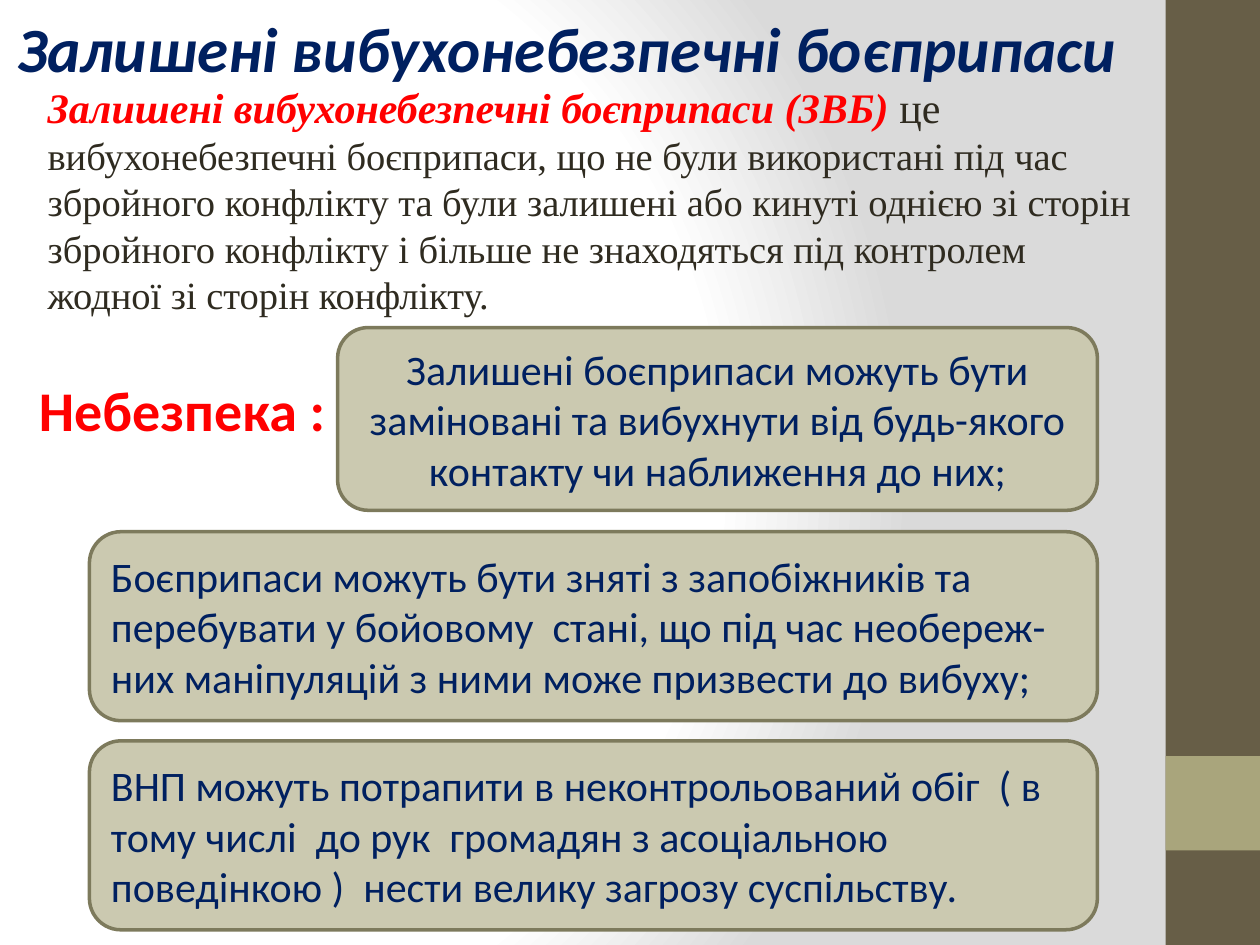
from pptx import Presentation
from pptx.dml.color import RGBColor
from pptx.enum.shapes import MSO_SHAPE
from pptx.enum.text import MSO_ANCHOR, MSO_AUTO_SIZE, PP_ALIGN
from pptx.oxml import parse_xml
from pptx.oxml.ns import nsdecls, qn
from pptx.util import Inches, Pt

NAVY = RGBColor(0x00, 0x20, 0x60)
RED = RGBColor(0xFF, 0x00, 0x00)
INK = RGBColor(0x2F, 0x2B, 0x20)
BROWN = RGBColor(0x67, 0x5E, 0x47)
OLIVE = RGBColor(0xA9, 0xA5, 0x7C)
BOX_FILL = RGBColor(0xCB, 0xC9, 0xB0)
BOX_LINE = RGBColor(0x7D, 0x7A, 0x5C)

# Text formats
TITLE = dict(name="Calibri", size=Pt(36), bold=True, italic=True, color=NAVY)
TERM = dict(name="Times New Roman", size=Pt(24), bold=True, italic=True, color=RED)
LINK = dict(name="Times New Roman", size=Pt(24), color=INK)
BODY = dict(name="Times New Roman", size=Pt(22), color=INK)
DANGER = dict(name="Calibri", size=Pt(32), bold=True, color=RED)
BOX = dict(name="Calibri", size=Pt(24), color=NAVY)

# Side bands: position, colour
BANDS = [((9.25, 0, 0.75, 7.5), BROWN), ((9.25, 6, 0.75, 0.75), OLIVE)]

# Text boxes: position, alignment, runs
TEXTS = [
    ((0.04, 0.03, 9.96, 0.71), PP_ALIGN.LEFT,
     [("Залишені вибухонебезпечні боєприпаси", TITLE)]),
    ((0.28, 0.6, 8.86, 1.99), PP_ALIGN.LEFT,
     [("Залишені вибухонебезпечні боєприпаси (ЗВБ) ", TERM),
      ("це ", LINK),
      ("вибухонебезпечні боєприпаси, що не були використані під час збройного "
       "конфлікту та були залишені або кинуті однією зі сторін збройного конфлікту "
       "і більше не знаходяться під контролем жодної зі сторін конфлікту.", BODY)]),
    ((-0.01, 2.93, 2.91, 0.64), PP_ALIGN.CENTER, [("Небезпека :", DANGER)]),
]

# Danger boxes share a right edge: left, top, height, alignment, text
BOX_RIGHT = 8.71
BOXES = [
    (2.68, 2.6, 1.45, PP_ALIGN.CENTER,
     "Залишені боєприпаси можуть бути заміновані та вибухнути від будь-якого "
     "контакту чи наближення до них;"),
    (0.71, 4.22, 1.5, PP_ALIGN.LEFT,
     "Боєприпаси можуть бути зняті з запобіжників та перебувати у бойовому  стані, "
     "що під час необереж-них маніпуляцій з ними може призвести до вибуху;"),
    (0.71, 5.88, 1.5, PP_ALIGN.LEFT,
     "ВНП можуть потрапити в неконтрольований обіг  ( в тому числі  до рук  громадян "
     "з асоціальною поведінкою )  нести велику загрозу суспільству."),
]

GRADIENT = f"""<a:gradFill {nsdecls('a')} rotWithShape="1"><a:gsLst>
<a:gs pos="0"><a:srgbClr val="FFFFFF"/></a:gs>
<a:gs pos="75000"><a:srgbClr val="FFFFFF"/></a:gs>
<a:gs pos="100000"><a:srgbClr val="DADADA"/></a:gs></a:gsLst>
<a:path path="circle"><a:fillToRect l="20000" t="50000" r="100000" b="50000"/></a:path>
</a:gradFill>"""


def set_background(s):
    s.background.fill.gradient()
    old = s.element.find(".//" + qn("a:gradFill"))
    old.getparent().replace(old, parse_xml(GRADIENT))


def write(tf, align, runs):
    tf.word_wrap = True
    p = tf.paragraphs[0]
    p.alignment = align
    for text, fmt in runs:
        r = p.add_run()
        r.text = text
        for key, value in fmt.items():
            if key == "color":
                r.font.color.rgb = value
            else:
                setattr(r.font, key, value)


def add_block(s, kind, at, fill, line=None):
    sp = s.shapes.add_shape(kind, *map(Inches, at))
    sp.shadow.inherit = False
    sp.fill.solid()
    sp.fill.fore_color.rgb = fill
    if line is None:
        sp.line.fill.background()
    else:
        sp.line.color.rgb = line
        sp.line.width = Pt(2)
    return sp


def main():
    prs = Presentation()
    prs.slide_width, prs.slide_height = Inches(10), Inches(7.5)
    s = prs.slides.add_slide(prs.slide_layouts[6])
    set_background(s)

    for at, color in BANDS:
        add_block(s, MSO_SHAPE.RECTANGLE, at, color)

    for at, align, runs in TEXTS:
        tf = s.shapes.add_textbox(*map(Inches, at)).text_frame
        write(tf, align, runs)
        tf.auto_size = MSO_AUTO_SIZE.SHAPE_TO_FIT_TEXT

    for left, top, height, align, text in BOXES:
        at = (left, top, BOX_RIGHT - left, height)
        sp = add_block(s, MSO_SHAPE.ROUNDED_RECTANGLE, at, BOX_FILL, BOX_LINE)
        sp.text_frame.vertical_anchor = MSO_ANCHOR.MIDDLE
        write(sp.text_frame, align, [(text, BOX)])

    prs.save("out.pptx")


if __name__ == "__main__":
    main()
